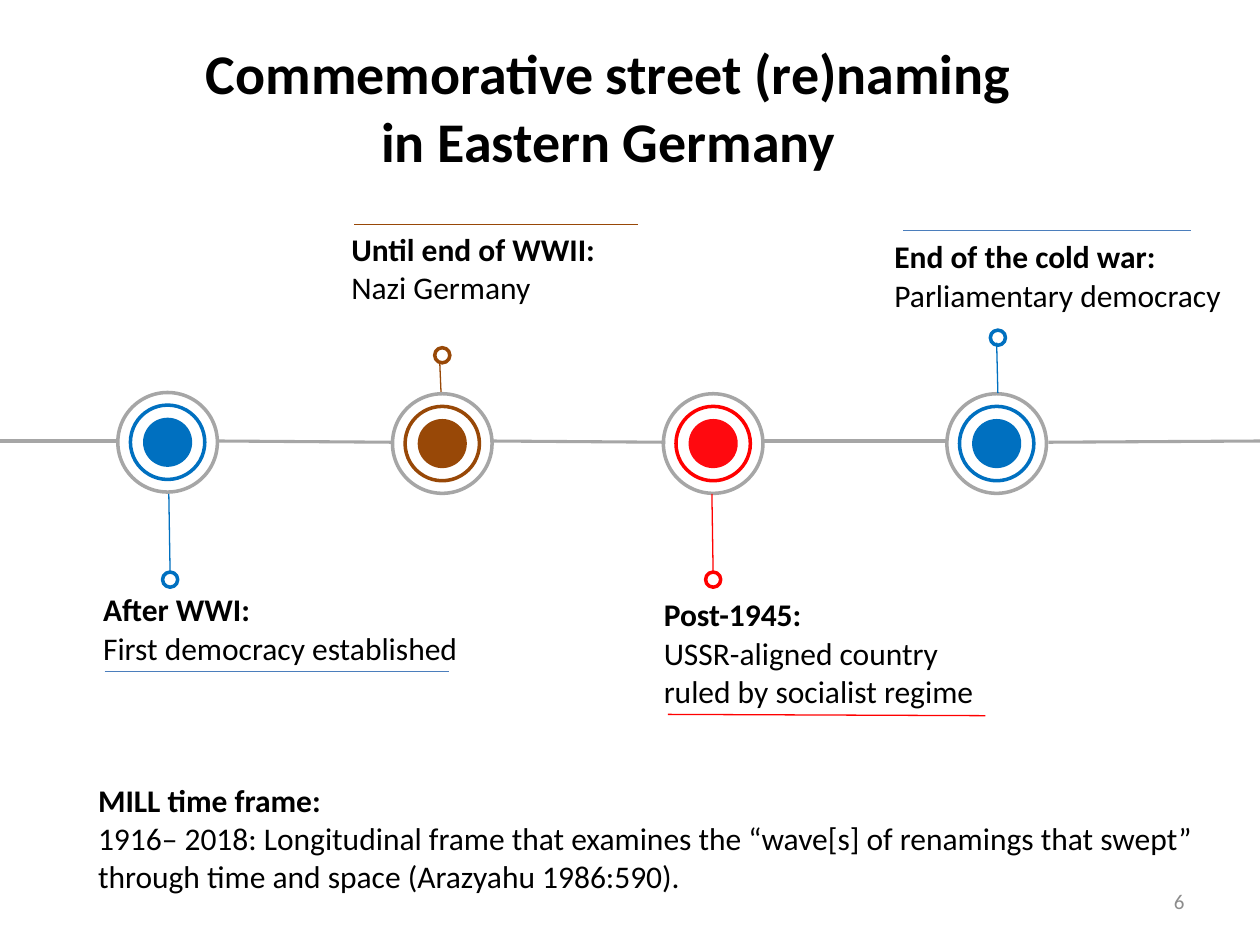
from pptx import Presentation
from pptx.dml.color import RGBColor
from pptx.enum.shapes import MSO_CONNECTOR as Connector, MSO_SHAPE as Shape
from pptx.enum.text import MSO_ANCHOR as Anchor, PP_ALIGN as Align
from pptx.oxml.ns import qn
from pptx.util import Inches, Pt
from lxml.etree import SubElement

BLACK, GREY, BLUE, BROWN, RED = "000000", "A6A6A6", "0070C0", "984807", "FF0000"
RULE_BLUE, CORE_RED, NUMBER_GREY = "4B7EBC", "FF090F", "8C8C8C"
CORE, RING, RIM, PIN = 0.39, 0.59, 0.79, 0.12

# Each event: station centre, ring and core colour, stem ends, pin centre,
# label box, label lines, rule ends and rule colour
EVENTS = [
    dict(centre=(1.33, 3.51), ring=BLUE, core=BLUE,
         stem=((1.34, 3.92), (1.35, 4.55)), pin=(1.35, 4.6),
         label=(0.72, 4.63, 5, 0.72),
         lines=["After WWI:", "First democracy established"],
         rule=((0.83, 5.33), (3.56, 5.33)), rule_color=RULE_BLUE),
    dict(centre=(3.51, 3.52), ring=BROWN, core=BROWN,
         stem=((3.5, 3.11), (3.49, 2.87)), pin=(3.51, 2.82),
         label=(2.69, 1.77, 5, 0.72),
         lines=["Until end of WWII:", "Nazi Germany"],
         rule=((2.81, 1.78), (5.06, 1.78)), rule_color=BROWN),
    dict(centre=(5.66, 3.52), ring=RED, core=CORE_RED,
         stem=((5.65, 3.92), (5.66, 4.55)), pin=(5.66, 4.6),
         label=(5.17, 4.67, 5, 1.03),
         lines=["Post-1945:", "USSR-aligned country", "ruled by socialist regime"],
         rule=((5.3, 5.67), (7.82, 5.68)), rule_color=RED),
    dict(centre=(7.91, 3.52), ring=BLUE, core=BLUE,
         stem=((7.92, 3.12), (7.91, 2.72)), pin=(7.92, 2.68),
         label=(7, 1.83, 5, 0.71),
         lines=["End of the cold war:", "Parliamentary democracy"],
         rule=((7.17, 1.83), (9.45, 1.83)), rule_color=RULE_BLUE),
]
AXIS = [
    ((0, 3.5), (0.94, 3.5)),
    ((1.74, 3.5), (3.12, 3.51)),
    ((3.9, 3.5), (5.28, 3.51)),
    ((6.06, 3.5), (7.52, 3.5)),
    ((8.32, 3.51), (10, 3.5)),
]


def rgb(color):
    return RGBColor.from_string(color)


def add_circle(slide, centre, diameter, fill=None, outline=None):
    left, top = (Inches(c - diameter / 2) for c in centre)
    circle = slide.shapes.add_shape(Shape.OVAL, left, top, Inches(diameter), Inches(diameter))
    circle.shadow.inherit = False
    if fill:
        circle.fill.solid()
        circle.fill.fore_color.rgb = rgb(fill)
    else:
        circle.fill.background()
    if outline:
        circle.line.color.rgb = rgb(outline)
        circle.line.width = Pt(2)
    else:
        circle.line.fill.background()


def add_line(slide, start, end, color, width=0.75):
    ends = [Inches(c) for c in (*start, *end)]
    line = slide.shapes.add_connector(Connector.STRAIGHT, *ends)
    line.line.color.rgb = rgb(color)
    line.line.width = Pt(width)
    SubElement(line._element.spPr, qn("a:effectLst"))


def add_text(slide, box, lines, size=18, color=BLACK, bold_lines=1,
             anchor=Anchor.TOP, **paragraph_format):
    """Add one paragraph per line, with the first bold_lines of them bold."""
    frame = slide.shapes.add_textbox(*(Inches(v) for v in box)).text_frame
    frame.word_wrap = True
    frame.vertical_anchor = anchor
    for index, line in enumerate(lines):
        paragraph = frame.paragraphs[0] if index == 0 else frame.add_paragraph()
        for name, value in paragraph_format.items():
            setattr(paragraph, name, value)
        run = paragraph.add_run()
        run.text = line
        font_format = dict(name="Calibri", size=Pt(size), bold=index < bold_lines)
        for name, value in font_format.items():
            setattr(run.font, name, value)
        run.font.color.rgb = rgb(color)


def add_event(slide, event):
    add_circle(slide, event["centre"], CORE, fill=event["core"])
    add_circle(slide, event["centre"], RING, outline=event["ring"])
    add_circle(slide, event["centre"], RIM, outline=GREY)
    add_line(slide, *event["stem"], event["ring"])
    add_circle(slide, event["pin"], PIN, outline=event["ring"])
    add_text(slide, event["label"], event["lines"],
             alignment=Align.JUSTIFY, line_spacing=Pt(22))
    add_line(slide, *event["rule"], event["rule_color"])


def main():
    deck = Presentation()
    deck.slide_width, deck.slide_height = Inches(10), Inches(7.5)
    slide = deck.slides.add_slide(deck.slide_layouts[6])

    add_text(slide, (0.81, 0.26, 8.04, 1.18),
             ["Commemorative street (re)naming", "in Eastern Germany"],
             size=32, bold_lines=2, alignment=Align.CENTER)
    for start, end in AXIS:
        add_line(slide, start, end, GREY, 1.75)
    for event in EVENTS:
        add_event(slide, event)
    add_text(slide, (0.68, 6.15, 9.64, 1.01), [
        "MILL time frame:",
        "1916– 2018: Longitudinal frame that examines the “wave[s] of renamings "
        "that swept” through time and space (Arazyahu 1986:590).",
    ])
    add_text(slide, (7.17, 6.95, 2.33, 0.4), ["6"], size=12, color=NUMBER_GREY,
             bold_lines=0, anchor=Anchor.MIDDLE, alignment=Align.RIGHT)
    deck.save("out.pptx")


if __name__ == "__main__":
    main()
